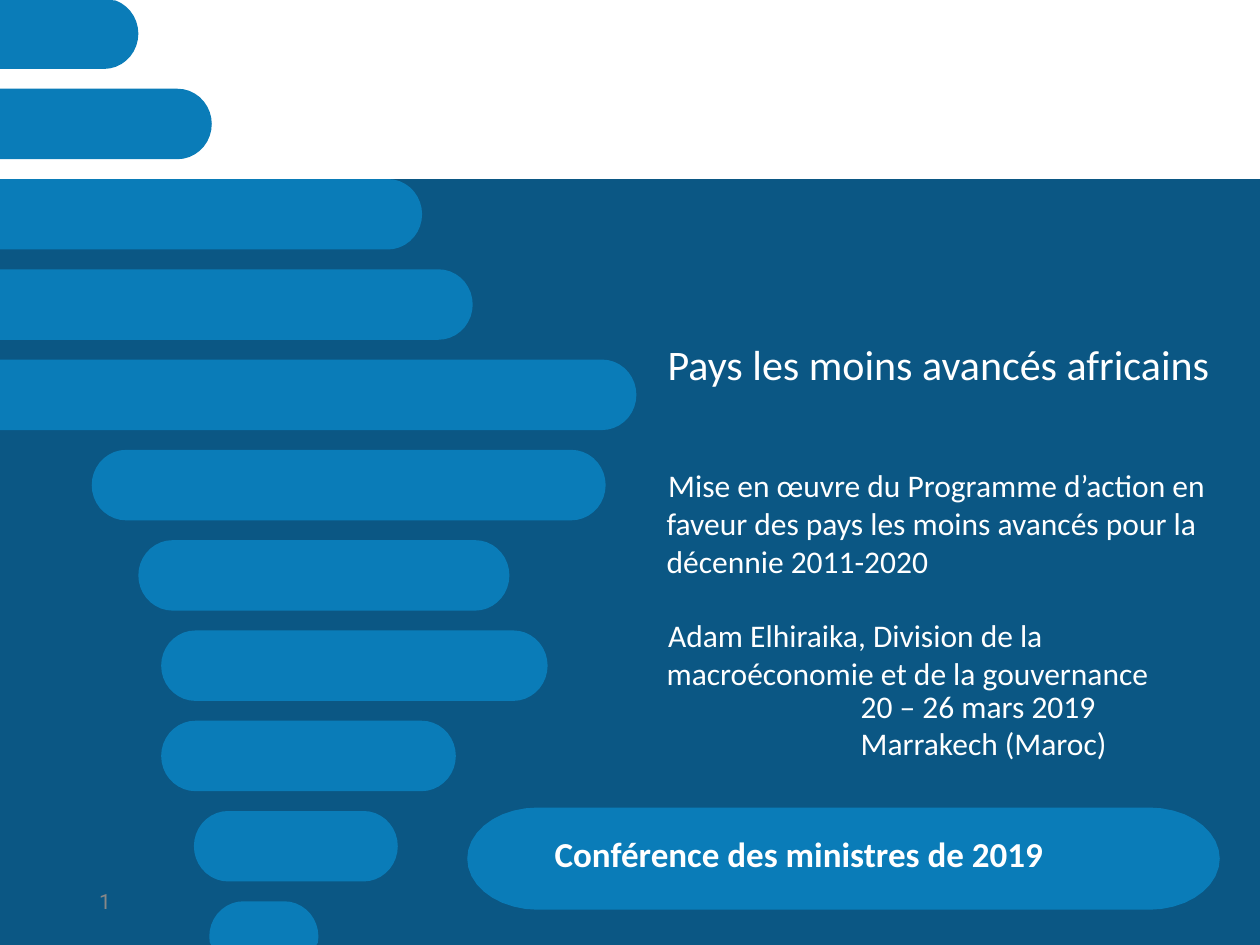
import dataclasses
import math

import pptx
import pptx.dml.color
import pptx.enum.shapes
import pptx.enum.text
import pptx.util

Cm = pptx.util.Cm
Pt = pptx.util.Pt
ANCHOR = pptx.enum.text.MSO_ANCHOR


@dataclasses.dataclass(frozen=True)
class Theme:
    navy: str = "0B5784"
    blue: str = "0A7CB8"
    white: str = "FFFFFF"
    grey: str = "888888"
    font: str = "Calibri"
    number_font: str = "Roboto"
    title: int = 24
    conference: int = 20
    body: int = 18
    number: int = 12


@dataclasses.dataclass(frozen=True)
class Box:
    left: float
    top: float
    width: float
    height: float

    def emu(self):
        return Cm(self.left), Cm(self.top), Cm(self.width), Cm(self.height)


THEME = Theme()
PAGE = Box(0, 0, 25.4, 19.05)


def rgb(colour):
    return pptx.dml.color.RGBColor.from_string(colour)


def paint(shape, colour):
    shape.shadow.inherit = False
    shape.fill.solid()
    shape.fill.fore_color.rgb = rgb(colour)
    shape.line.fill.background()


def write(frame, lines, size, colour=THEME.white, font=THEME.font, bold=False,
          margin=0.0, first_line=0.0, inset=0.0, anchor=ANCHOR.TOP):
    frame.word_wrap = True
    frame.vertical_anchor = anchor
    frame.margin_left = frame.margin_right = Cm(inset)
    frame.margin_top = frame.margin_bottom = Cm(inset)
    frame.text = "\n".join(lines)
    for paragraph in frame.paragraphs:
        paragraph.alignment = pptx.enum.text.PP_ALIGN.LEFT
        properties = paragraph._p.get_or_add_pPr()
        properties.set("marL", str(Cm(margin)))
        properties.set("indent", str(Cm(first_line)))
        for run in paragraph.runs:
            run.font.name = font
            run.font.size = Pt(size)
            run.font.bold = bold
            run.font.color.rgb = rgb(colour)


def add_text(slide, box, lines, size, **style):
    frame = slide.shapes.add_textbox(*box.emu()).text_frame
    write(frame, lines, size, **style)
    return frame


def add_pill(slide, box, cap, square_left=False):
    middle = box.top + box.height / 2
    right = box.left + box.width

    def arc(centre, start):
        angles = [math.radians(start + step * 10) for step in range(19)]
        return [(centre + cap * math.cos(angle),
                 middle + box.height / 2 * math.sin(angle)) for angle in angles]

    if square_left:
        left_end = [(box.left, box.top + box.height), (box.left, box.top)]
    else:
        left_end = arc(box.left + cap, 90)
    outline = [(Cm(x), Cm(min(max(y, 0), PAGE.height)))
               for x, y in arc(right - cap, -90) + left_end]
    builder = slide.shapes.build_freeform(*outline[0])
    builder.add_line_segments(outline[1:], close=True)
    paint(builder.convert_to_shape(), THEME.blue)


def add_backdrop(slide, box):
    backdrop = slide.shapes.add_shape(
        pptx.enum.shapes.MSO_SHAPE.RECTANGLE, *box.emu())
    paint(backdrop, THEME.navy)


def add_bars(slide, box):
    pitch, height, cap = 1.82, 1.42, 0.69
    spans = [(0, 2.79), (0, 4.27), (0, 8.51), (0, 9.53), (0, 12.83),
             (1.85, 12.21), (2.79, 10.27), (3.25, 11.04), (3.25, 9.19),
             (3.91, 8.02), (4.22, 6.42)]
    for row, (start, end) in enumerate(spans):
        bar = Box(box.left + start, box.top + row * pitch, end - start, height)
        add_pill(slide, bar, cap, square_left=start == 0)


def add_conference(slide, box):
    add_pill(slide, box, 1.42)
    label = Box(box.left + 0.56, box.top + 0.38, 13.94, 1.12)
    add_text(slide, label, ["Conférence des ministres de 2019"],
             THEME.conference, bold=True, first_line=1.07, inset=0.13)


def add_title(slide, box):
    title = slide.shapes.title
    slide.shapes._spTree.append(title._element)
    title.left, title.top, title.width, title.height = box.emu()
    write(title.text_frame, ["Pays les moins avancés africains"],
          THEME.title, inset=0.25, anchor=ANCHOR.MIDDLE)
    title.text_frame.paragraphs[0].line_spacing = 0.9


def add_talk(slide, box):
    subject = ("Mise en œuvre du Programme d’action en faveur des pays "
               "les moins avancés pour la décennie 2011-2020")
    speaker = "Adam Elhiraika, Division de la macroéconomie et de la gouvernance"
    frame = add_text(slide, box, [subject, speaker], THEME.body, first_line=0.03)
    frame.paragraphs[1].space_before = Pt(20.7)


def add_venue(slide, box):
    add_text(slide, box, ["20 – 26 mars 2019", "Marrakech (Maroc)"],
             THEME.body, margin=0.51, first_line=1.02)


def add_page_number(slide, box):
    add_text(slide, box, ["1"], THEME.number, colour=THEME.grey,
             font=THEME.number_font, inset=0.25, anchor=ANCHOR.MIDDLE)


def main():
    deck = pptx.Presentation()
    deck.slide_width, deck.slide_height = Cm(PAGE.width), Cm(PAGE.height)
    slide = deck.slides.add_slide(deck.slide_layouts.get_by_name("Title Only"))
    add_backdrop(slide, Box(0, 3.61, PAGE.width, PAGE.height - 3.61))
    add_bars(slide, Box(0, -0.03, 12.83, PAGE.height))
    add_conference(slide, Box(9.42, 16.28, 15.17, 2.06))
    add_title(slide, Box(13.21, 5.64, 11.84, 3.53))
    add_talk(slide, Box(13.44, 9.4, 11.35, 4.57))
    add_venue(slide, Box(15.82, 13.84, 8, 1.55))
    add_page_number(slide, Box(1.75, 17.65, 5.72, 1.02))
    deck.save("out.pptx")


if __name__ == "__main__":
    main()
